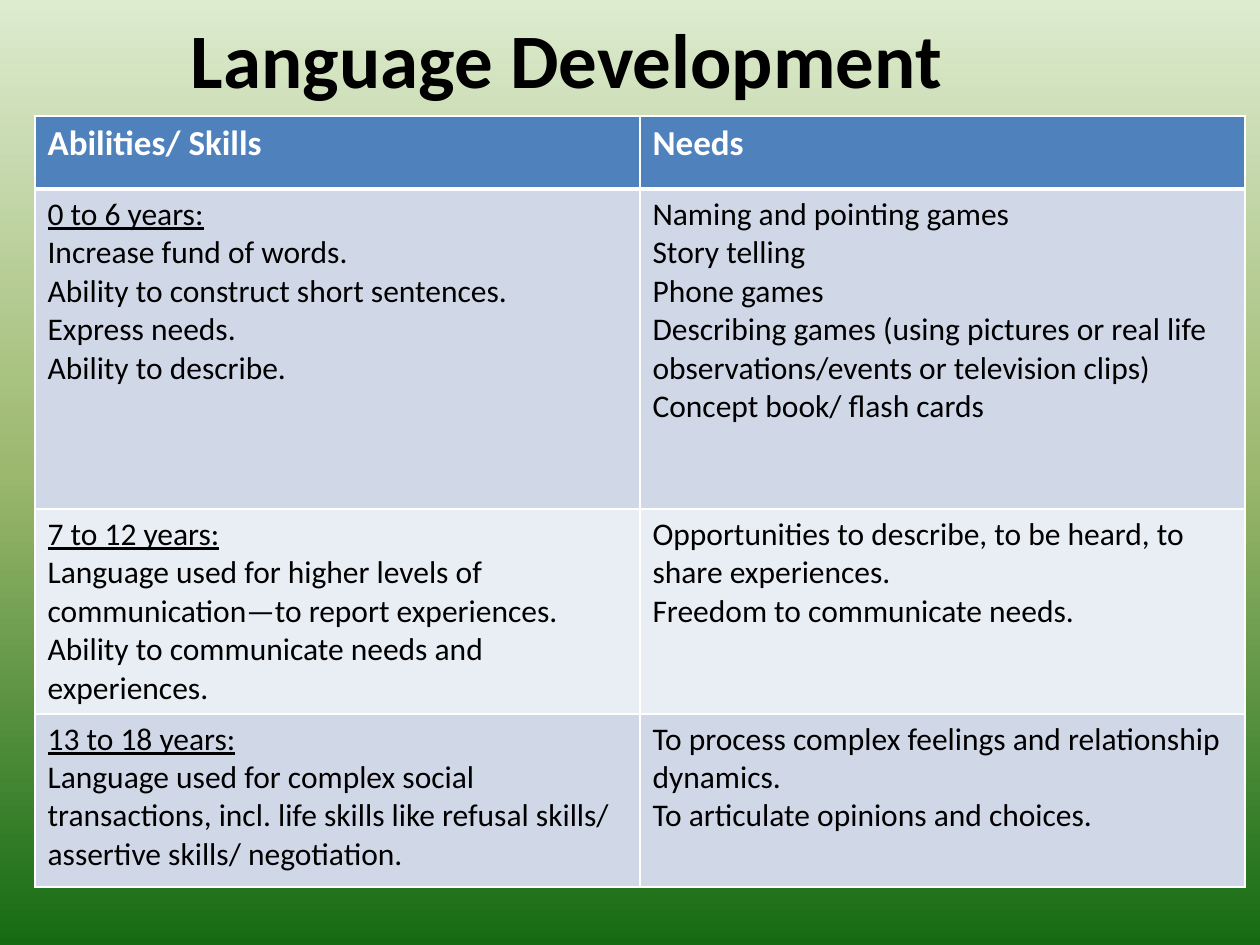
import pptx
import pptx.util
import pptx.dml.color
import pptx.enum.text
import pptx.oxml.ns
from lxml import etree

TITLE = "Language Development"
HEADERS = ("Abilities/ Skills", "Needs")
# One entry per age group: age heading, abilities, needs
AGE_GROUPS = [
    ("0 to 6 years:",
     ["Increase fund of words.", "Ability to construct short sentences.",
      "Express needs.", "Ability to describe."],
     ["Naming and pointing games", "Story telling", "Phone games",
      "Describing games (using pictures or real life observations/events or television clips)",
      "Concept book/ flash cards"]),
    ("7 to 12 years:",
     ["Language used for higher levels of communication—to report experiences.",
      "Ability to communicate needs and experiences."],
     ["Opportunities to describe, to be heard, to share experiences.",
      "Freedom to communicate needs."]),
    ("13 to 18 years:",
     ["Language used for complex social transactions, incl. life skills like "
      "refusal skills/ assertive skills/ negotiation."],
     ["To process complex feelings and relationship dynamics.",
      "To articulate opinions and choices."]),
]

THEME = {
    "font": "Calibri", "title_size": 44, "header_size": 20, "body_size": 18,
    "text": "000000", "header_text": "FFFFFF", "header_fill": "4F81BD",
    "bands": ("D0D8E8", "E9EDF4"), "border": "FFFFFF",
    "border_width": 1, "header_rule_width": 3,
    "background": ((0, "DDEBCF"), (50, "9CB86E"), (100, "156B13")),
}

PX = 914400 // 126
SLIDE_SIZE = (1260, 945)
TITLE_BOX = (0, 0, 1134, 116)
TABLE_LEFT, TABLE_TOP = 35, 116
COLUMN_WIDTH = 605
ROW_HEIGHTS = (73, 320, 202, 173)


def rgb(color):
    return pptx.dml.color.RGBColor.from_string(color)


def add_element(parent, tag, **attributes):
    return etree.SubElement(parent, pptx.oxml.ns.qn(tag), attributes)


def set_background(slide):
    fill = slide.background.fill
    fill.gradient()
    fill.gradient_angle = 270
    stops = slide.element.find(".//" + pptx.oxml.ns.qn("a:gsLst"))
    stops.clear()
    for percent, color in THEME["background"]:
        stop = add_element(stops, "a:gs", pos=str(percent * 1000))
        add_element(stop, "a:srgbClr", val=color)


def format_paragraph(paragraph, size, color, bold=False, underline=False):
    for run in paragraph.runs:
        font = run.font
        font.name = THEME["font"]
        font.size = pptx.util.Pt(size)
        font.bold = bold
        font.underline = underline
        font.color.rgb = rgb(color)


def set_borders(cell, top, bottom):
    """Draw the four cell borders; top and bottom are widths in points."""
    properties = cell._tc.get_or_add_tcPr()
    side = THEME["border_width"]
    widths = {"a:lnL": side, "a:lnR": side, "a:lnT": top, "a:lnB": bottom}
    for position, (tag, width) in enumerate(widths.items()):
        line = add_element(properties, tag, w=str(pptx.util.Pt(width)))
        add_element(add_element(line, "a:solidFill"), "a:srgbClr", val=THEME["border"])
        properties.insert(position, line)


def add_title(slide):
    title = slide.shapes.title
    title.left, title.top, title.width, title.height = (n * PX for n in TITLE_BOX)
    frame = title.text_frame
    frame.text = TITLE
    frame.vertical_anchor = pptx.enum.text.MSO_ANCHOR.MIDDLE
    frame.paragraphs[0].alignment = pptx.enum.text.PP_ALIGN.CENTER
    format_paragraph(frame.paragraphs[0], THEME["title_size"], THEME["text"], bold=True)


def add_development_table(slide):
    rows = [[[header] for header in HEADERS]]
    rows += [[[age, *abilities], needs] for age, abilities, needs in AGE_GROUPS]
    table = slide.shapes.add_table(
        len(rows), len(HEADERS), TABLE_LEFT * PX, TABLE_TOP * PX,
        COLUMN_WIDTH * len(HEADERS) * PX, sum(ROW_HEIGHTS) * PX).table
    for column in table.columns:
        column.width = COLUMN_WIDTH * PX
    for row, height in zip(table.rows, ROW_HEIGHTS):
        row.height = height * PX

    thin, thick = THEME["border_width"], THEME["header_rule_width"]
    for row_index, row in enumerate(rows):
        is_header = row_index == 0
        band = THEME["bands"][(row_index - 1) % 2]
        for column_index, lines in enumerate(row):
            cell = table.cell(row_index, column_index)
            cell.fill.solid()
            cell.fill.fore_color.rgb = rgb(THEME["header_fill"] if is_header else band)
            set_borders(cell, thick if row_index == 1 else thin,
                        thick if is_header else thin)
            cell.text_frame.text = "\n".join(lines)
            for line_index, paragraph in enumerate(cell.text_frame.paragraphs):
                if is_header:
                    format_paragraph(paragraph, THEME["header_size"],
                                     THEME["header_text"], bold=True)
                else:
                    is_age = column_index == 0 and line_index == 0
                    format_paragraph(paragraph, THEME["body_size"],
                                     THEME["text"], underline=is_age)


def main():
    presentation = pptx.Presentation()
    presentation.slide_width, presentation.slide_height = (n * PX for n in SLIDE_SIZE)
    slide = presentation.slides.add_slide(presentation.slide_layouts[5])
    set_background(slide)
    add_title(slide)
    add_development_table(slide)
    presentation.save("out.pptx")


if __name__ == "__main__":
    main()
